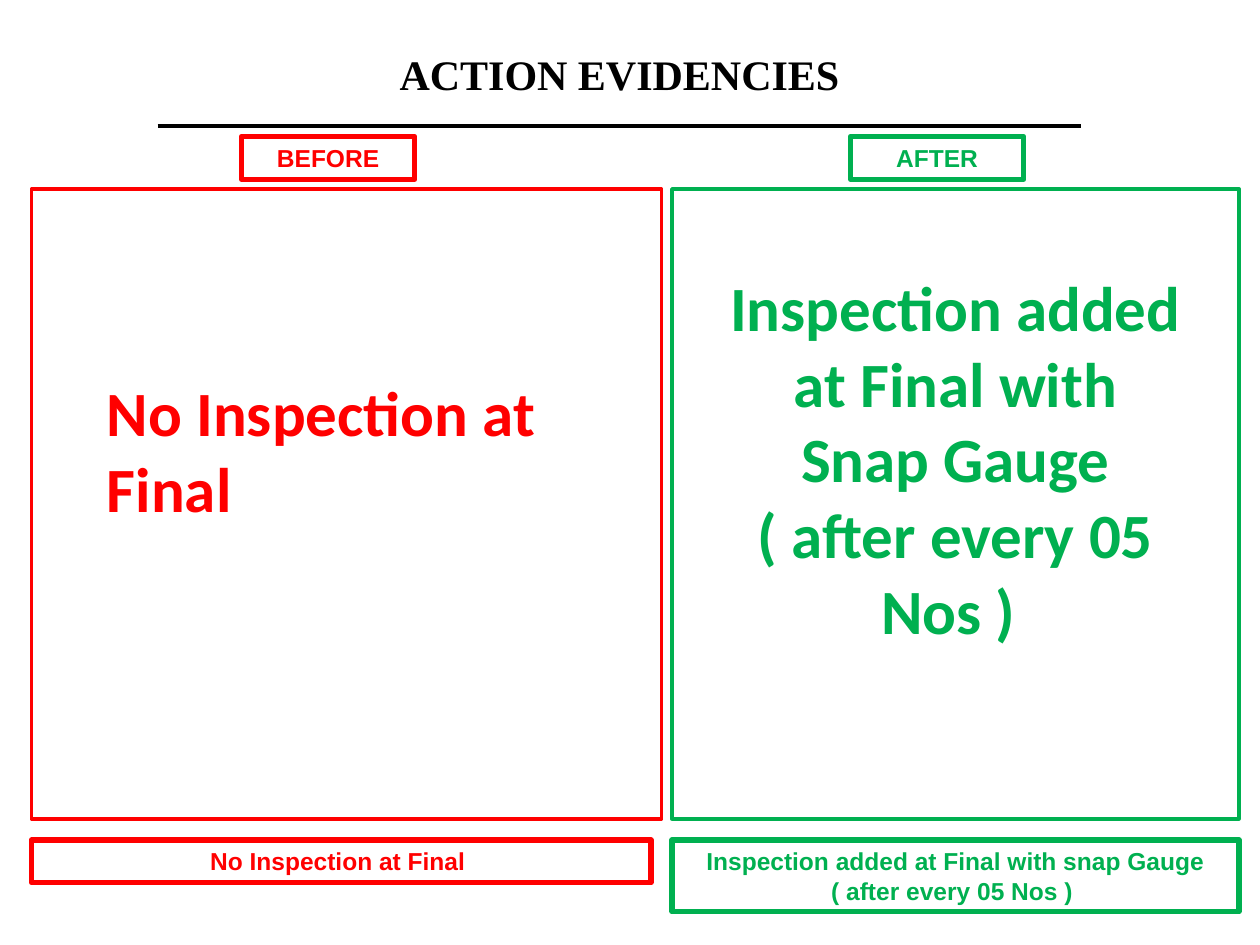
from dataclasses import dataclass

from lxml import etree
from pptx import Presentation
from pptx import util as u
from pptx.dml.color import RGBColor
from pptx.enum import shapes, text
from pptx.oxml.ns import qn

# Grid: 120 columns by 90 rows on a 10 x 7.5 inch slide
CELL = u.Inches(10) // 120
BLACK, RED, GREEN = "000000", "FF0000", "00B050"


@dataclass
class Box:
    column: float
    row: float
    columns: float
    rows: float

    def lengths(self) -> list[int]:
        return [round(n * CELL) for n in (self.column, self.row, self.columns, self.rows)]


@dataclass
class Panel:
    color: str
    frame: Box
    heading: str
    heading_box: Box
    message: str
    message_box: Box
    message_align: text.PP_ALIGN
    caption: str
    caption_box: Box


PANELS = [
    Panel(RED, Box(3, 18, 60, 60),
          "BEFORE", Box(23, 13, 16.5, 4.08),
          "No Inspection at Final", Box(9, 35, 46, 15.72), text.PP_ALIGN.LEFT,
          "No Inspection at Final ", Box(3, 80, 59, 4.08)),
    Panel(GREEN, Box(64, 18, 54, 60),
          "AFTER", Box(81, 13, 16.5, 4.08),
          "Inspection added at Final with Snap Gauge ( after every 05 Nos ) ",
          Box(68, 25, 46, 37.56), text.PP_ALIGN.CENTER,
          "Inspection added at Final with snap Gauge ( after every 05 Nos ) ",
          Box(64, 80, 54, 6.84)),
]


def rgb(color: str) -> RGBColor:
    return RGBColor.from_string(color)


def write(shape, words: str, font_name: str, size: float, color: str,
          align=text.PP_ALIGN.CENTER, anchor=text.MSO_ANCHOR.TOP) -> None:
    frame = shape.text_frame
    frame.word_wrap = True
    frame.auto_size = text.MSO_AUTO_SIZE.NONE
    frame.vertical_anchor = anchor
    paragraph = frame.paragraphs[0]
    paragraph.text = words
    paragraph.alignment = align
    font = paragraph.font
    font.name, font.size, font.bold = font_name, u.Pt(size), True
    font.color.rgb = rgb(color)


def add_frame(slide, box: Box, color: str, width: float):
    shape = slide.shapes.add_shape(shapes.MSO_SHAPE.RECTANGLE, *box.lengths())
    shape.shadow.inherit = False
    shape.fill.background()
    shape.line.color.rgb = rgb(color)
    shape.line.width = u.Pt(width)
    return shape


def add_label(slide, box: Box, words: str, color: str) -> None:
    write(add_frame(slide, box, color, 3), words, "Arial", 14, color)


def add_panel(slide, panel: Panel) -> None:
    add_frame(slide, panel.frame, panel.color, 2)
    add_label(slide, panel.heading_box, panel.heading, panel.color)
    add_label(slide, panel.caption_box, panel.caption, panel.color)
    message = slide.shapes.add_textbox(*panel.message_box.lengths())
    write(message, panel.message, "Calibri", 36, panel.color, panel.message_align)


def add_title(slide) -> None:
    title = slide.shapes.title
    title.left, title.top, title.width, title.height = Box(12, 4, 95, 6).lengths()
    write(title, "ACTION EVIDENCIES ", "Times New Roman", 24, BLACK,
          anchor=text.MSO_ANCHOR.MIDDLE)

    # Rule under the title
    rule = slide.shapes.add_connector(
        shapes.MSO_CONNECTOR.STRAIGHT, 15 * CELL, 12 * CELL, 103 * CELL, 12 * CELL)
    rule.line.color.rgb = rgb(BLACK)
    rule.line.width = u.Pt(2.25)
    etree.SubElement(rule._element.spPr, qn("a:effectLst"))


def main() -> None:
    presentation = Presentation()
    presentation.slide_width, presentation.slide_height = 120 * CELL, 90 * CELL
    slide = presentation.slides.add_slide(presentation.slide_layouts[5])
    add_title(slide)
    for panel in PANELS:
        add_panel(slide, panel)
    presentation.save("out.pptx")


if __name__ == "__main__":
    main()
